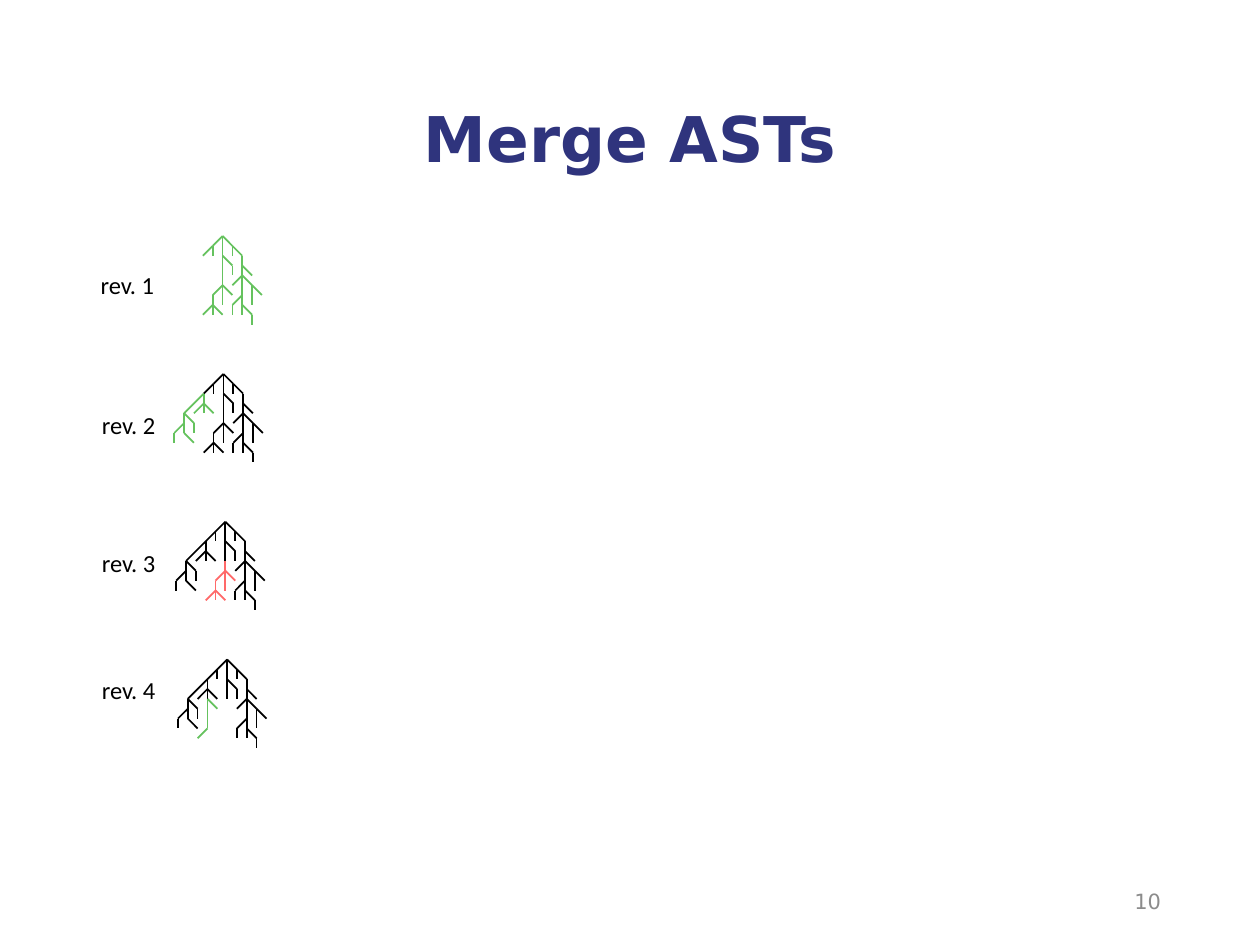
from lxml import etree
from pptx import Presentation
from pptx.dml.color import RGBColor
from pptx.enum import shapes, text
from pptx.oxml.ns import qn
from pptx.util import Pt

STEP = 5.62
BLACK, GREEN, RED = "000000", "65C25E", "FF6969"

CROWN = [
    (0, 0, 0, 4), (0, 0, 1, 1), (1, 1, 2, 2), (1, 1, 1, 2), (2, 2, 2, 8),
    (2, 3, 3, 4), (2, 4, 1, 5), (2, 4, 3, 5), (3, 5, 4, 6), (2, 6, 1, 7),
    (1, 7, 1, 8), (3, 5, 3, 7), (2, 7, 3, 8), (0, 2, 1, 3), (1, 3, 1, 4),
    (3, 8, 3, 9), (0, 0, -1, 1), (-1, 1, -1, 2), (-1, 1, -2, 2),
]
LEFT = [
    (-2, 2, -4, 4), (-4, 5, -5, 6), (-5, 6, -5, 7), (-4, 6, -3, 7),
    (-4, 4, -4, 6), (-4, 4, -3, 5), (-3, 5, -3, 6), (-2, 2, -2, 3),
    (-2, 3, -3, 4), (-2, 3, -1, 4), (-2, 3, -2, 4),
]
LOW = [
    (-1, 6, -1, 7), (-1, 7, 0, 8), (-1, 7, -1, 8), (-1, 6, 0, 5),
    (0, 4, 0, 7), (-1, 7, -2, 8), (0, 5, 1, 6),
]
TAIL = [(-2, 4, -2, 7), (-2, 4, -1, 5), (-2, 7, -3, 8)]

REVS = [
    ("rev. 1", (50.4, 150.5), (127.2, 134.9), [(CROWN, GREEN), (LOW, GREEN)]),
    ("rev. 2", (51.1, 230.4), (127.7, 213.7),
     [(CROWN, BLACK), (LEFT, GREEN), (LOW, BLACK)]),
    ("rev. 3", (51.1, 309.6), (128.8, 298.1),
     [(CROWN, BLACK), (LEFT, BLACK), (LOW, RED)]),
    ("rev. 4", (51.1, 382.3), (129.8, 376.9),
     [(CROWN, BLACK), (LEFT, BLACK), (TAIL, GREEN)]),
]


def paint(form, color):
    form.rgb = RGBColor.from_string(color)


def write(slide, box, words, size, face, color, align, wrap=True):
    frame = slide.shapes.add_textbox(*map(Pt, box)).text_frame
    frame.word_wrap = wrap
    frame.vertical_anchor = text.MSO_ANCHOR.MIDDLE
    para = frame.paragraphs[0]
    para.text = words
    para.alignment = align
    para.font.size = Pt(size)
    para.font.name = face
    paint(para.font.color, color)
    return frame


def title(slide, box):
    frame = write(slide, box, "Merge ASTs", 36, "DejaVu Sans", "2F347D",
                  text.PP_ALIGN.CENTER)
    para = frame.paragraphs[0]
    para.font.bold = True
    para.line_spacing = 0.9


def tree(slide, root, parts):
    group = slide.shapes.add_group_shape()
    left, top = root
    for twigs, color in parts:
        for x1, y1, x2, y2 in twigs:
            twig = group.shapes.add_connector(
                shapes.MSO_CONNECTOR.STRAIGHT,
                Pt(left + x1 * STEP), Pt(top + y1 * STEP),
                Pt(left + x2 * STEP), Pt(top + y2 * STEP))
            twig.line.width = Pt(1)
            paint(twig.line.color, color)
            props = twig.element.find(qn("p:spPr"))
            etree.SubElement(props, qn("a:effectLst"))


def label(slide, box, words):
    frame = write(slide, box, words, 14, "Calibri", BLACK,
                  text.PP_ALIGN.LEFT, False)
    frame.auto_size = text.MSO_AUTO_SIZE.SHAPE_TO_FIT_TEXT


def footer(slide, box):
    write(slide, box, "10", 12, "DejaVu Sans", "8C8C8C", text.PP_ALIGN.RIGHT)


def main():
    deck = Presentation()
    deck.slide_width, deck.slide_height = Pt(720), Pt(540)
    slide = deck.slides.add_slide(deck.slide_layouts[6])
    title(slide, (49.5, 29, 621, 104.4))
    for name, spot, root, parts in REVS:
        tree(slide, root, parts)
        label(slide, (*spot, 45.4, 24.2), name)
    footer(slide, (508.5, 500.5, 162, 28.75))
    deck.save("out.pptx")


if __name__ == "__main__":
    main()
